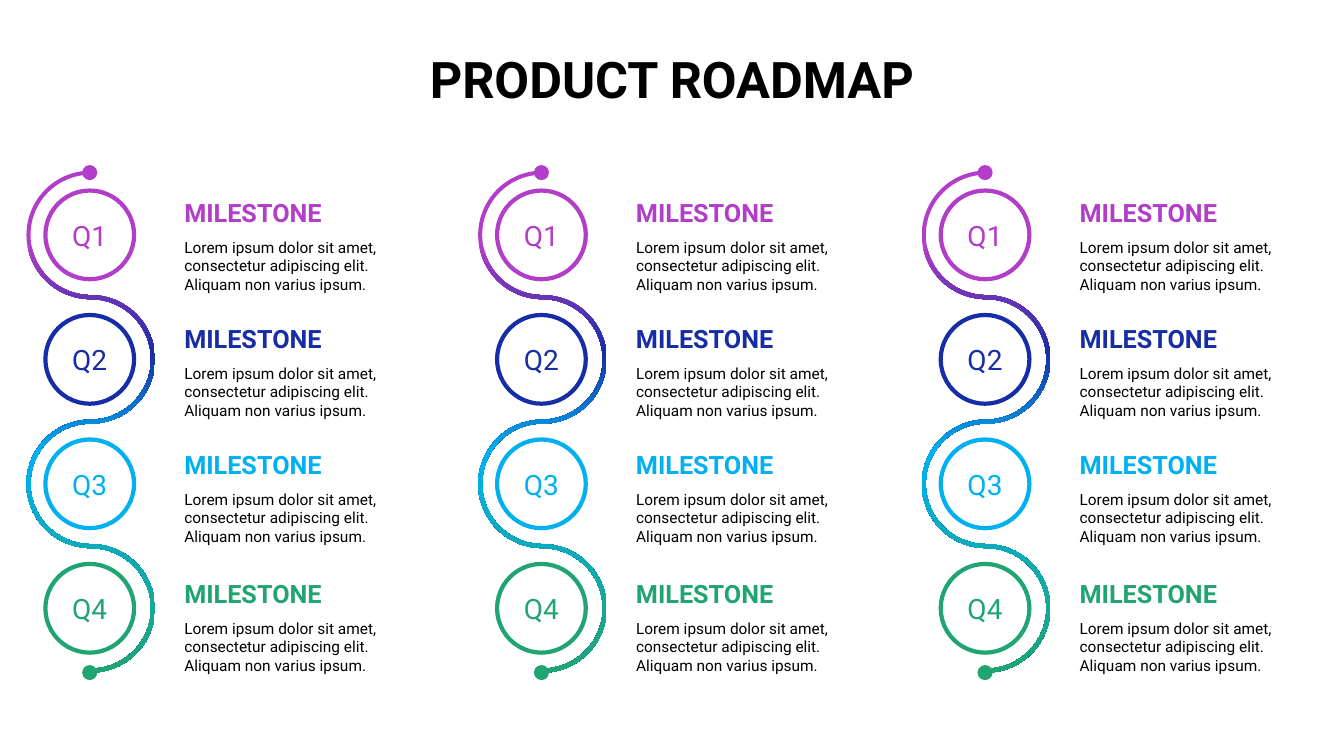
import lxml.etree
import pptx
import pptx.dml.color
import pptx.enum.shapes
import pptx.enum.text
import pptx.oxml.ns
import pptx.util

Inches = pptx.util.Inches
Pt = pptx.util.Pt
RGBColor = pptx.dml.color.RGBColor
ALIGN = pptx.enum.text.PP_ALIGN
OVAL = pptx.enum.shapes.MSO_SHAPE.OVAL

PURPLE = RGBColor(0xB1, 0x3D, 0xC8)
NAVY = RGBColor(0x17, 0x2D, 0xA6)
SKY = RGBColor(0x00, 0xB0, 0xF0)
GREEN = RGBColor(0x20, 0xA4, 0x72)
BLACK = RGBColor(0, 0, 0)
WHITE = RGBColor(0xFF, 0xFF, 0xFF)

FONT = "Roboto"
BODY = ("Lorem ipsum dolor sit amet, consectetur adipiscing elit. "
        "Aliquam non varius ipsum.")

# Quarter label, colour, top of its heading
STEPS = [("Q1", PURPLE, 1.94), ("Q2", NAVY, 3.19),
         ("Q3", SKY, 4.44), ("Q4", GREEN, 5.72)]
STOPS = [(15, PURPLE), (36, NAVY), (56, SKY), (100, GREEN)]

# Centre of each column, first ring centre and ring distance, in inches
COLUMNS = [0.89, 5.37, 9.77]
FIRST = 2.33
PITCH = 2.47 / 2
RING = 0.88
DOT = 0.15
HALF = 0.02  # half the ribbon's width
DEGREE = 60000  # angle unit of drawing paths


def style(para, size, color, bold=False):
    """Format the runs of one paragraph."""
    for run in para.runs:
        font = run.font
        font.name, font.size, font.bold = FONT, Pt(size), bold
        font.color.rgb = color


def add_text(slide, box, text, size, color, bold=False, align=ALIGN.LEFT,
             space=1.0):
    """Place a wrapped text box."""
    frame = slide.shapes.add_textbox(*map(Inches, box)).text_frame
    frame.word_wrap = True
    para = frame.paragraphs[0]
    para.text = text
    para.alignment = align
    para.line_spacing = space
    para.space_before = Pt(10)
    style(para, size, color, bold)


def add_disc(slide, x, y, size, fill):
    """Place a plain disc by its centre."""
    disc = slide.shapes.add_shape(
        OVAL, Inches(x - size / 2), Inches(y - size / 2),
        Inches(size), Inches(size))
    disc.shadow.inherit = False
    disc.fill.solid()
    disc.fill.fore_color.rgb = fill
    disc.line.fill.background()
    return disc


def add_ring(slide, x, y, label, color):
    """Place an outlined disc with its quarter label."""
    ring = add_disc(slide, x, y, RING, WHITE)
    ring.line.color.rgb = color
    ring.line.width = Pt(3)
    frame = ring.text_frame
    frame.vertical_anchor = pptx.enum.text.MSO_ANCHOR.MIDDLE
    para = frame.paragraphs[0]
    para.text = label
    para.alignment = ALIGN.CENTER
    style(para, 20, color)


def add_node(parent, tag, **values):
    """Append one drawing element."""
    texts = {key: str(value) for key, value in values.items()}
    return lxml.etree.SubElement(parent, pptx.oxml.ns.qn(tag), texts)


def add_edge(route, tag, x, y, start):
    """Draw one ribbon edge: half circles that swing left, then right."""
    add_node(add_node(route, tag), "a:pt", x=Inches(x), y=Inches(y))
    for i in range(len(STEPS)):
        turn = -1 if i % 2 == 0 else 1
        radius = Inches(PITCH / 2 - turn * HALF)
        add_node(route, "a:arcTo", wR=radius, hR=radius,
                 stAng=start * DEGREE, swAng=turn * 180 * DEGREE)


def add_ribbon(slide, x):
    """Place the winding ribbon with a gradient from top to bottom."""
    wide = PITCH + 2 * HALF
    high = len(STEPS) * PITCH + 2 * HALF
    left, top = x - wide / 2, FIRST - PITCH / 2 - HALF
    right, low = left + wide, top + high
    frame = slide.shapes.build_freeform(Inches(left), Inches(top))
    frame.add_line_segments([(Inches(right), Inches(top)),
                             (Inches(right), Inches(low)),
                             (Inches(left), Inches(low))])
    ribbon = frame.convert_to_shape()
    ribbon.shadow.inherit = False
    ribbon.line.fill.background()
    # Curved outline inside the frame: down one edge, back up the other
    find = pptx.oxml.ns.qn
    props = ribbon.element.spPr
    route = props.find(".//" + find("a:path"))
    for node in list(route):
        route.remove(node)
    add_edge(route, "a:moveTo", wide / 2, 0, 270)
    add_edge(route, "a:lnTo", wide / 2, high, 90)
    add_node(route, "a:close")
    # Four stops instead of the default two
    ribbon.fill.gradient()
    ribbon.fill.gradient_angle = 270
    stops = props.find(".//" + find("a:gsLst"))
    for stop in list(stops):
        stops.remove(stop)
    for share, color in STOPS:
        stop = add_node(stops, "a:gs", pos=share * 1000)
        add_node(stop, "a:srgbClr", val=color)


def add_column(slide, x):
    """Place one roadmap of four quarters."""
    # Rings
    for i, (label, color, _) in enumerate(STEPS):
        add_ring(slide, x, FIRST + i * PITCH, label, color)
    # Ribbon and its end dots
    add_ribbon(slide, x + 0.01)
    add_disc(slide, x, FIRST - PITCH / 2, DOT, PURPLE)
    add_disc(slide, x, FIRST + 3.5 * PITCH + 0.02, DOT, GREEN)
    # Milestones
    left = x + 0.84
    for _, color, top in STEPS:
        add_text(slide, (left, top, 2.36, 0.33), "MILESTONE", 18, color,
                 bold=True, space=0.9)
        add_text(slide, (left, top + 0.37, 2.38, 0.77), BODY, 11, BLACK)


def main():
    deck = pptx.Presentation()
    deck.slide_width, deck.slide_height = Inches(13.33), Inches(7.5)
    slide = deck.slides.add_slide(deck.slide_layouts[6])
    for x in COLUMNS:
        add_column(slide, x)
    # Title
    add_text(slide, (0.25, 0.5, 12.83, 0.69), "PRODUCT ROADMAP", 36, BLACK,
             bold=True, align=ALIGN.CENTER, space=0.9)
    deck.save("out.pptx")


if __name__ == "__main__":
    main()
